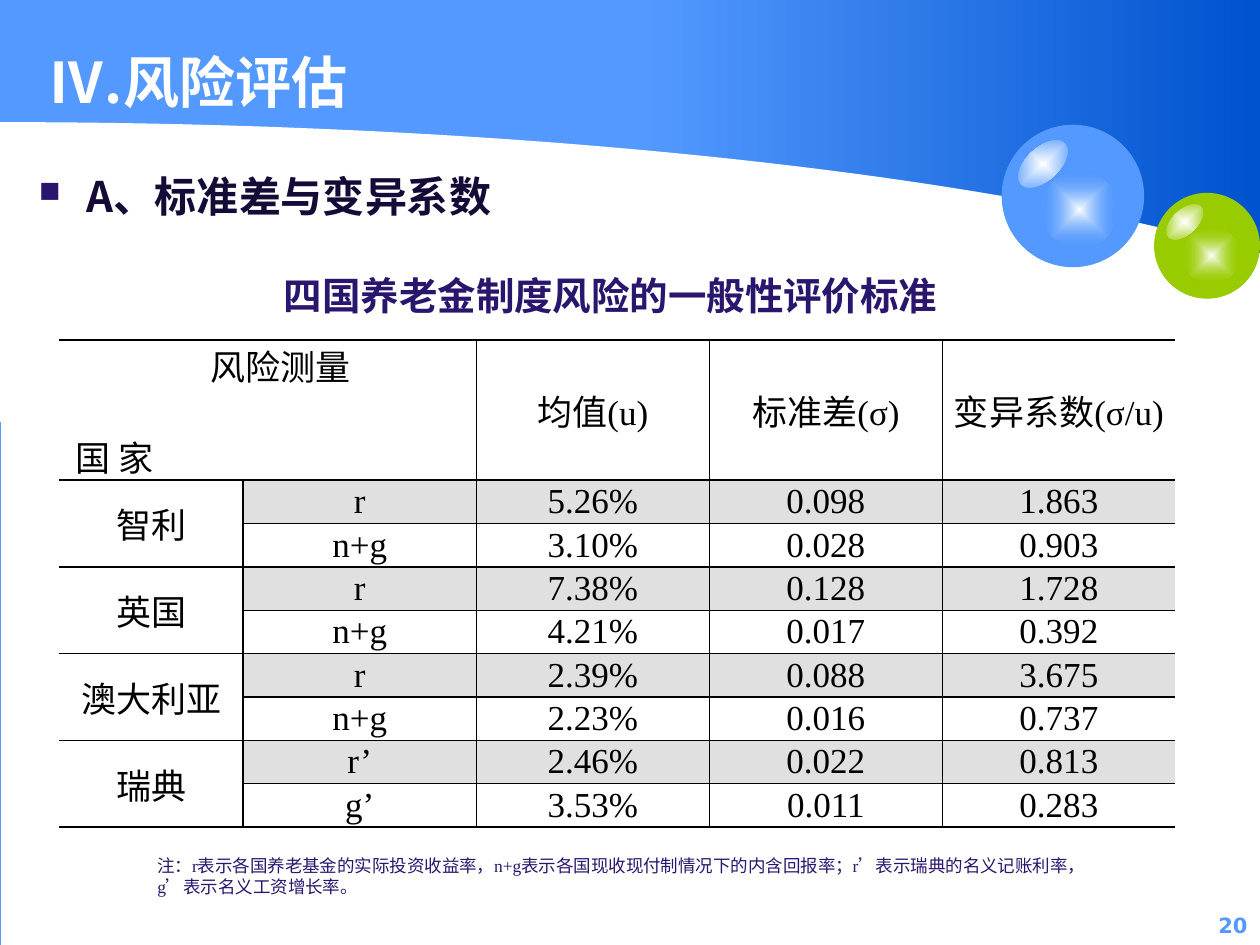
from pptx import Presentation
from pptx.dml.color import RGBColor
from pptx.enum.shapes import MSO_SHAPE as Shape
from pptx.enum.text import MSO_ANCHOR as Anchor, PP_ALIGN as Align
from pptx.oxml import parse_xml
from pptx.oxml.ns import nsdecls, qn
from pptx.util import Pt

SKY = RGBColor(0x53, 0x99, 0xFF)
DEEP_BLUE = RGBColor(0x00, 0x53, 0xCE)
LIME = RGBColor(0x99, 0xCC, 0x00)
WHITE = RGBColor(0xFF, 0xFF, 0xFF)
BLACK = RGBColor(0x00, 0x00, 0x00)
GREY = RGBColor(0xE0, 0xE0, 0xE0)
PURPLE = RGBColor(0x2B, 0x16, 0x6E)
DARK_PURPLE = RGBColor(0x16, 0x0B, 0x37)

SANS = "Noto Sans CJK SC"
SERIF = "Times New Roman"
DIGITS = "DejaVu Sans"

LINEAR = '<a:lin ang="0" scaled="1"/>'
RADIAL = '<a:path path="shape"><a:fillToRect l="50000" t="50000" r="50000" b="50000"/></a:path>'

HEADINGS = ["均值(u)", "标准差(σ)", "变异系数(σ/u)"]
COUNTRIES = ["智利", "英国", "澳大利亚", "瑞典"]
MEASURES = [
    ["r", "5.26%", "0.098", "1.863"],
    ["n+g", "3.10%", "0.028", "0.903"],
    ["r", "7.38%", "0.128", "1.728"],
    ["n+g", "4.21%", "0.017", "0.392"],
    ["r", "2.39%", "0.088", "3.675"],
    ["n+g", "2.23%", "0.016", "0.737"],
    ["r’", "2.46%", "0.022", "0.813"],
    ["g’", "3.53%", "0.011", "0.283"],
]
NOTE = ("注：r表示各国养老基金的实际投资收益率，n+g表示各国现收现付制情况下的内含回报率；"
        "r’表示瑞典的名义记账利率，g’表示名义工资增长率。")


class SlideBuilder:
    """Holds the current slide and draws its elements in one style, in points."""

    def __init__(self, slide):
        self.slide = slide

    def finish(self, shape, color):
        shape.shadow.inherit = False
        shape.line.fill.background()
        shape.fill.solid()
        shape.fill.fore_color.rgb = color
        return shape

    def shape(self, kind, left, top, width, height, color):
        box = map(Pt, (left, top, width, height))
        return self.finish(self.slide.shapes.add_shape(kind, *box), color)

    def gradient(self, shape, start, end, direction, end_alpha=100):
        shape.fill.background()
        old = shape.element.spPr.find(qn("a:noFill"))
        new = parse_xml(
            f'<a:gradFill {nsdecls("a")} rotWithShape="1"><a:gsLst>'
            f'<a:gs pos="0"><a:srgbClr val="{start}"/></a:gs>'
            f'<a:gs pos="100000"><a:srgbClr val="{end}"><a:alpha val="{end_alpha * 1000}"/>'
            f'</a:srgbClr></a:gs></a:gsLst>{direction}</a:gradFill>')
        old.getparent().replace(old, new)

    def wave(self, curve, corner, color, steps=60):
        points = []
        for step in range(steps + 1):
            t = step / steps
            weights = ((1 - t) ** 3, 3 * t * (1 - t) ** 2, 3 * t * t * (1 - t), t ** 3)
            points.append(tuple(Pt(sum(w * p[axis] for w, p in zip(weights, curve)))
                                for axis in (0, 1)))
        outline = self.slide.shapes.build_freeform(*points[0], scale=1.0)
        outline.add_line_segments(points[1:] + [tuple(map(Pt, corner))], close=True)
        self.finish(outline.convert_to_shape(), color)

    def ball(self, left, top, size, color):
        self.shape(Shape.OVAL, left, top, size, size, color)
        glow = self.shape(Shape.OVAL, left + 0.27 * size, top + 0.32 * size,
                          0.55 * size, 0.55 * size, color)
        self.gradient(glow, WHITE, color, RADIAL, 0)
        glint = self.shape(Shape.OVAL, left + 0.08 * size, top + 0.16 * size,
                           0.42 * size, 0.23 * size, color)
        glint.rotation = 317.2
        self.gradient(glint, WHITE, color, RADIAL)

    def run(self, paragraph, words, size, font, color, bold=False):
        run = paragraph.add_run()
        run.text = words
        run.font.size, run.font.bold, run.font.name = Pt(size), bold, font
        run.font.color.rgb = color
        latin = run.font._element.find(qn("a:latin"))
        latin.addnext(parse_xml(f'<a:ea {nsdecls("a")} typeface="{SANS}"/>'))

    def text(self, left, top, width, height, words, size, font, color,
             bold=False, align=Align.LEFT, anchor=Anchor.TOP):
        box = self.slide.shapes.add_textbox(*map(Pt, (left, top, width, height)))
        frame = box.text_frame
        frame.word_wrap, frame.vertical_anchor = True, anchor
        paragraph = frame.paragraphs[0]
        paragraph.alignment = align
        self.run(paragraph, words, size, font, color, bold)
        return paragraph

    def indent(self, paragraph, left, first=0):
        properties = paragraph._p.get_or_add_pPr()
        properties.set("marL", str(Pt(left)))
        properties.set("indent", str(Pt(first)))
        return properties

    def bullet(self, paragraph, color):
        paragraph.space_before = Pt(4.8)
        properties = self.indent(paragraph, 27, -27)
        for mark in (f'<a:buClr {nsdecls("a")}><a:srgbClr val="{color}"/></a:buClr>',
                     f'<a:buSzPct {nsdecls("a")} val="70000"/>',
                     f'<a:buChar {nsdecls("a")} char="■"/>'):
            properties.append(parse_xml(mark))

    def borders(self, cell, **widths):
        properties = cell._tc.get_or_add_tcPr()
        for place, (side, width) in enumerate(widths.items()):
            fill = f'<a:solidFill><a:srgbClr val="{BLACK}"/></a:solidFill>' if width else "<a:noFill/>"
            properties.insert(place, parse_xml(
                f'<a:ln{side} {nsdecls("a")} w="{Pt(width)}">{fill}</a:ln{side}>'))

    def cell_text(self, cell, words, align=Align.CENTER, follow=False):
        frame = cell.text_frame
        paragraph = frame.add_paragraph() if follow else frame.paragraphs[0]
        paragraph.alignment = align
        self.run(paragraph, words, 20, SERIF, BLACK)
        return paragraph

    def table(self, left, top, widths, heights):
        frame = self.slide.shapes.add_table(
            len(heights), len(widths),
            *map(Pt, (left, top, sum(widths), sum(heights))))
        table = frame.table
        table.first_row = table.horz_banding = False
        for style in frame.element.iter(qn("a:tableStyleId")):
            style.text = "{2D5ABB26-0587-4C30-8999-92F81FD0307C}"
        for column, width in zip(table.columns, widths):
            column.width = Pt(width)
        for row, height in zip(table.rows, heights):
            row.height = Pt(height)
        return table

    def format_cells(self, table):
        rows, columns = len(table.rows), len(table.columns)
        for r in range(rows):
            for c in range(columns):
                cell = table.cell(r, c)
                if cell.is_spanned:
                    continue
                cell.vertical_anchor = Anchor.MIDDLE
                cell.margin_left = cell.margin_right = Pt(5)
                cell.margin_top = cell.margin_bottom = Pt(0)
                if r % 2 and c:
                    cell.fill.solid()
                    cell.fill.fore_color.rgb = GREY
                else:
                    cell.fill.background()
                below, right = r + cell.span_height, c + cell.span_width
                self.borders(cell, L=1 if c else 0, R=1 if right < columns else 0,
                             T=1 if r else 1.5, B=1 if below < rows else 1.5)

    def risk_table(self):
        table = self.table(33.8, 194.4, [105.2] + [133.2] * 4, [80] + [24.8] * 8)
        corner = table.cell(0, 0)
        corner.merge(table.cell(0, 1))
        self.indent(self.cell_text(corner, "风险测量"), 15)
        country_label = self.cell_text(corner, "国 家", Align.LEFT, follow=True)
        country_label.space_before = Pt(23)
        self.indent(country_label, 0, 4.3)
        for c, heading in enumerate(HEADINGS, 2):
            self.cell_text(table.cell(0, c), heading)
        for i, country in enumerate(COUNTRIES):
            name = table.cell(2 * i + 1, 0)
            name.merge(table.cell(2 * i + 2, 0))
            self.cell_text(name, country)
        for r, values in enumerate(MEASURES, 1):
            for c, value in enumerate(values, 1):
                self.cell_text(table.cell(r, c), value)
        self.format_cells(table)


def main():
    deck = Presentation()
    deck.slide_width, deck.slide_height = Pt(720), Pt(540)
    slide = deck.slides.add_slide(deck.slide_layouts[6])
    slide.background.fill.solid()
    slide.background.fill.fore_color.rgb = SKY
    page = SlideBuilder(slide)

    banner = page.shape(Shape.RECTANGLE, 365, 0, 355, 214, SKY)
    page.gradient(banner, SKY, DEEP_BLUE, LINEAR)
    page.shape(Shape.RECTANGLE, 0.7, 144.7, 719.3, 395.3, WHITE)
    page.wave([(0, 69.8), (288.7, 69.8), (559.4, 97.9), (720, 145)], (0, 241.2), WHITE)
    page.ball(659.5, 110.2, 60.5, LIME)
    page.ball(572.4, 71.3, 81.4, SKY)

    page.text(491.8, 517.7, 228.2, 23.8, "20", 12, DIGITS, SKY, True, Align.RIGHT)
    page.text(20.9, 17.3, 658, 51.8, "Ⅳ.风险评估", 32, SANS, WHITE, True, anchor=Anchor.BOTTOM)
    topic = page.text(15.1, 93.6, 648, 356.4, "A、标准差与变异系数", 24, SANS, DARK_PURPLE, True)
    page.bullet(topic, PURPLE)
    page.risk_table()
    page.text(131.8, 151.9, 434.2, 33.8, "四国养老金制度风险的一般性评价标准",
              22, SERIF, PURPLE, True, Align.CENTER)
    page.text(82.8, 485.3, 558.7, 31.7, NOTE, 10, SERIF, PURPLE)
    deck.save("out.pptx")


if __name__ == "__main__":
    main()
